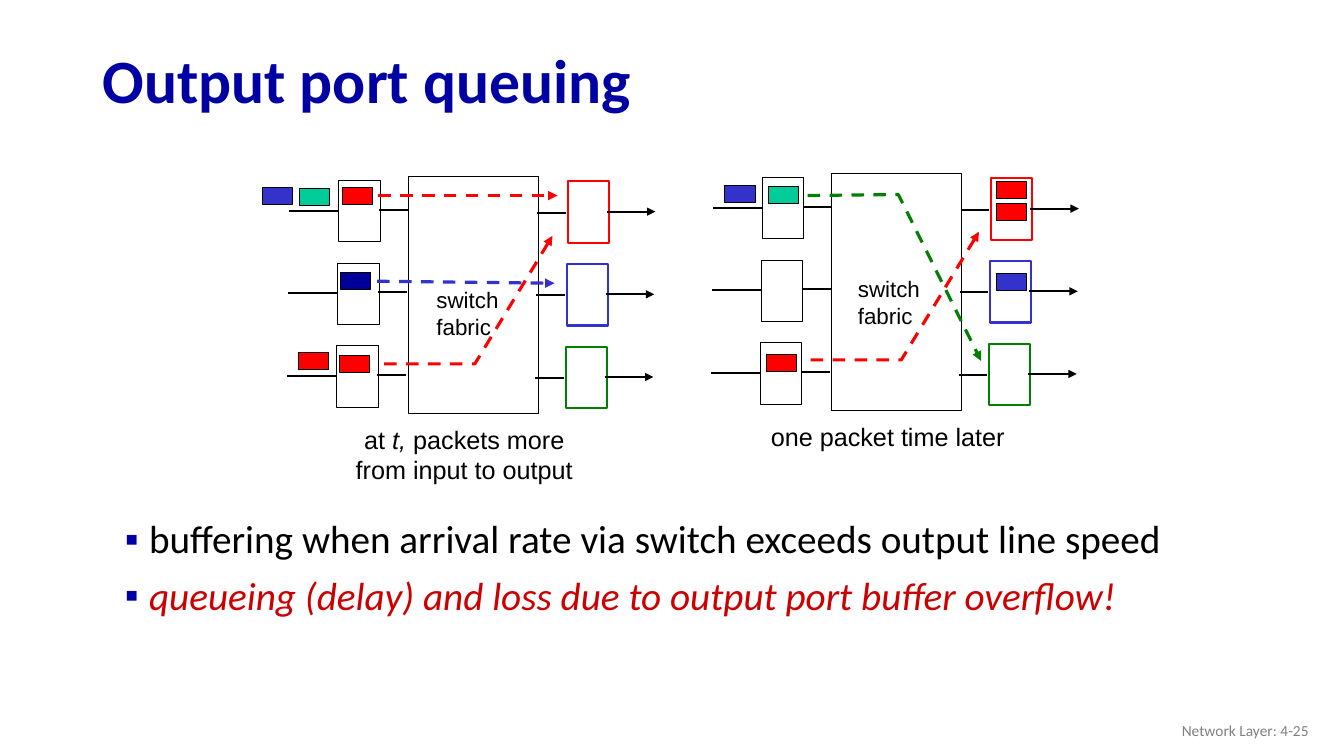
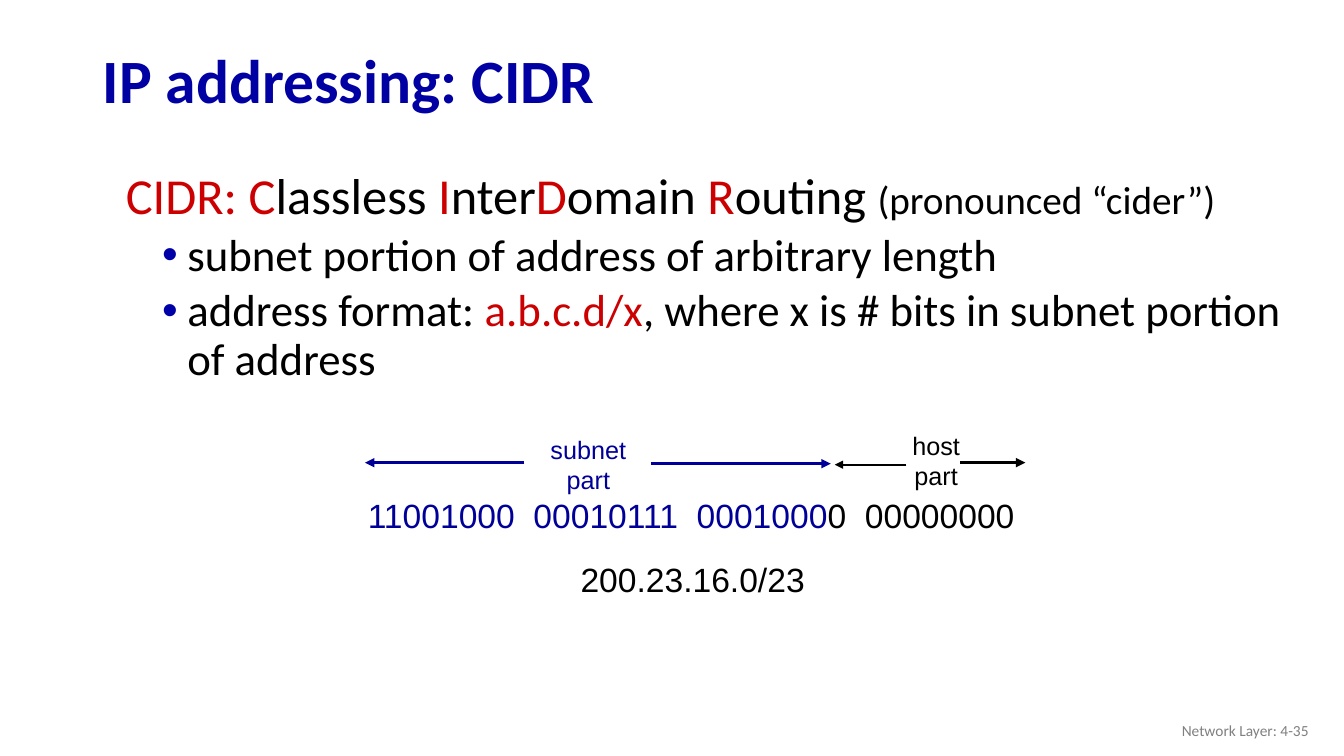
import lxml.etree
import pptx
import pptx.dml.color
import pptx.enum.dml
import pptx.enum.shapes
import pptx.enum.text
import pptx.oxml.ns
import pptx.util

RGBColor = pptx.dml.color.RGBColor
Inches = pptx.util.Inches
Pt = pptx.util.Pt
ALIGN = pptx.enum.text.PP_ALIGN
ANCHOR = pptx.enum.text.MSO_ANCHOR

BLACK = RGBColor(0, 0, 0)
WHITE = RGBColor(0xFF, 0xFF, 0xFF)
TITLE_BLUE = RGBColor(0, 0, 0xA3)
BULLET_BLUE = RGBColor(0, 0, 0xA8)
NAVY = RGBColor(0, 0, 0x99)
BLUE = RGBColor(0x33, 0x33, 0xCC)
RED = RGBColor(0xFF, 0, 0)
ACCENT = RGBColor(0xCC, 0, 0)
GREEN = RGBColor(0, 0x80, 0)
TEAL = RGBColor(0, 0xCC, 0x99)
GRAY = RGBColor(0x80, 0x80, 0x80)

TITLE = dict(name="Calibri", size=Pt(44), bold=True, color=TITLE_BLUE)
FOOTER = dict(name="Calibri", size=Pt(11), color=GRAY)
BODY = dict(name="Calibri", size=Pt(28), color=BLACK)
LEAD = {**BODY, "size": Pt(36)}
POINT = {**BODY, "size": Pt(32)}
LABEL = dict(name="Arial", size=Pt(18), color=BLACK)
FABRIC = {**LABEL, "size": Pt(16)}
BITS = {**LABEL, "size": Pt(24)}
SUBNET = {**LABEL, "color": NAVY}

TIGHT = dict(line_spacing=0.9)
CENTER = dict(alignment=ALIGN.CENTER)
SPACED = dict(line_spacing=0.9, space_before=Pt(10))
SUBPOINT = dict(line_spacing=0.9, space_before=Pt(5))
HANG = (0.39, -0.24)
SQUARE = dict(indent=HANG, bullet=("▪", TITLE_BLUE))
DOT = dict(indent=(0.76, -0.25), bullet=("•", BULLET_BLUE))

PITCH = 0.82
PORT = (0.41, 0.61)
PACKET = (0.3, 0.17)
PORT_COLORS = [RED, BLUE, GREEN]
LINKS = [(-1.18, -0.69, 0.34, False), (-0.29, 0, 0.33, False),
         (1.28, 1.56, 0.36, False), (1.97, 2.45, 0.35, True)]

DIAGRAMS = [
    dict(origin=(4.05, 1.75), label=(0.18, 1.04), caption_height=0.7,
         caption=[[("at ", {}), ("t,", dict(italic=True)), (" packets more", {})],
                  [("from input to output", {})]],
         packets=[(-0.65, 0.11, RED), (-0.67, 0.95, NAVY), (-0.68, 1.78, RED),
                  (-1.08, 0.12, TEAL), (-1.09, 1.75, RED), (-1.45, 0.11, BLUE)],
         routes=[(RED, [(-0.3, 0.19), (1.48, 0.19)]),
                 (BLUE, [(-0.31, 1.04), (1.45, 1.06)]),
                 (RED, [(-0.24, 1.86), (0.66, 1.86), (1.43, 0.59)])]),
    dict(origin=(8.25, 1.72), label=(0.16, 0.96), caption_height=0.4,
         caption=[[("one packet time later", {})]],
         packets=[(1.63, 0.08, RED), (1.63, 0.3, RED), (1.63, 0.99, BLUE),
                  (-0.63, 0.13, TEAL), (-0.65, 1.8, RED), (-1.06, 0.12, BLUE)],
         routes=[(RED, [(-0.21, 1.85), (0.69, 1.85), (1.46, 0.58)]),
                 (GREEN, [(-0.24, 0.22), (0.66, 0.21), (1.48, 1.86)])]),
]

QUEUING_POINTS = [
    [("buffering when arrival rate via switch exceeds output line speed", {})],
    [("queueing (delay) and loss due to output port buffer overflow!",
      dict(color=ACCENT, italic=True))],
]

RED_TEXT = dict(color=ACCENT)
CIDR_LEAD = [("CIDR: C", RED_TEXT), ("lassless ", {}), ("I", RED_TEXT), ("nter", {}),
             ("D", RED_TEXT), ("omain ", {}), ("R", RED_TEXT), ("outing ", {}),
             ("(pronounced “cider”)", dict(size=Pt(28)))]
CIDR_POINTS = [
    [("subnet portion of address of arbitrary length", {})],
    [("address format: ", {}), ("a.b.c.d/x", RED_TEXT),
     (", where x is # bits in subnet portion of address", {})],
]

ADDRESS_TEXTS = [
    ((3.55, 4.86, 6.7, 0.5), BITS, {},
     [[("11001000  00010111  0001000", dict(color=NAVY)), ("0  00000000", {})]]),
    ((5.36, 4.26, 0.95, 0.7), SUBNET, CENTER, [[("subnet", {})], [("part", {})]]),
    ((8.95, 4.22, 0.67, 0.7), LABEL, CENTER, [[("host", {})], [("part", {})]]),
    ((5.66, 5.5, 2.43, 0.5), BITS, {}, [[("200.23.16.0/23", {})]]),
]
ADDRESS_ARROWS = [(5.2, 3.62, 4.59, NAVY, 2.25), (6.46, 8.24, 4.6, NAVY, 2.25),
                  (8.99, 8.28, 4.61, BLACK, 1.5), (9.52, 10.17, 4.59, BLACK, 2.25)]


def add_child(parent, tag, **attributes):
    return lxml.etree.SubElement(parent, pptx.oxml.ns.qn(tag), attributes)


def set_format(target, values):
    for name, value in values.items():
        if name == "color":
            target.color.rgb = value
        else:
            setattr(target, name, value)


def mark_paragraph(para, indent=None, bullet=None):
    properties = para._p.get_or_add_pPr()
    if indent:
        properties.set("marL", str(Inches(indent[0])))
        properties.set("indent", str(Inches(indent[1])))
    if bullet:
        symbol, color = bullet
        add_child(add_child(properties, "a:buClr"), "a:srgbClr", val=str(color))
        add_child(properties, "a:buFont", typeface="Arial")
        add_child(properties, "a:buChar", char=symbol)


def fill_paragraph(para, spans, font, layout, marks):
    set_format(para, layout)
    mark_paragraph(para, **marks)
    for words, changes in spans:
        span = para.add_run()
        span.text = words
        set_format(span.font, {**font, **changes})


def add_text(page, place, paragraphs, wrap=True, anchor=ANCHOR.TOP):
    box = page.shapes.add_textbox(*map(Inches, place))
    frame = box.text_frame
    set_format(frame, dict(word_wrap=wrap, vertical_anchor=anchor))
    for index, paragraph in enumerate(paragraphs):
        para = frame.add_paragraph() if index else frame.paragraphs[0]
        fill_paragraph(para, *paragraph)


def style_all(lines, font, layout, marks={}):
    return [(spans, font, layout, marks) for spans in lines]


def add_rect(page, place, fill, color=BLACK, width=0.75):
    box = page.shapes.add_shape(pptx.enum.shapes.MSO_SHAPE.RECTANGLE, *map(Inches, place))
    box.shadow.inherit = False
    box.fill.solid()
    box.fill.fore_color.rgb = fill
    set_format(box.line, dict(color=color, width=Pt(width)))


def add_route(page, points, color=BLACK, width=1.5, arrow=True, dashed=False):
    corners = [(Inches(x), Inches(y)) for x, y in points]
    if len(corners) == 2:
        route = page.shapes.add_connector(
            pptx.enum.shapes.MSO_CONNECTOR.STRAIGHT, *corners[0], *corners[1])
    else:
        builder = page.shapes.build_freeform(*corners[0])
        builder.add_line_segments(corners[1:], close=False)
        route = builder.convert_to_shape()
        route.fill.background()
    set_format(route.line, dict(color=color, width=Pt(width)))
    if dashed:
        route.line.dash_style = pptx.enum.dml.MSO_LINE.DASH
    if arrow:
        add_child(route.line._get_or_add_ln(), "a:tailEnd", type="triangle")
    add_child(route._element.spPr, "a:effectLst")


def add_page(deck, title, number):
    page = deck.slides.add_slide(deck.slide_layouts[6])
    add_text(page, (0.92, 0.34, 11.5, 0.98), style_all([[(title, {})]], TITLE, TIGHT),
             anchor=ANCHOR.MIDDLE)
    add_text(page, (10.08, 7.05, 3, 0.4),
             style_all([[(f"Network Layer: 4-{number}", {})]], FOOTER,
                       dict(alignment=ALIGN.RIGHT)), anchor=ANCHOR.MIDDLE)
    return page


def add_diagram(page, diagram):
    left, top = diagram["origin"]
    add_rect(page, (left, top, 1.29, 2.35), WHITE)
    for row, color in enumerate(PORT_COLORS):
        lean, drop = left - 0.01 * row, top + PITCH * row
        add_rect(page, (lean - 0.69, drop + 0.04, *PORT), WHITE)
        add_rect(page, (lean + 1.58, drop + 0.05, *PORT), WHITE, color, 1.5)
        for start, end, height, arrow in LINKS:
            add_route(page, [(lean + start, drop + height), (lean + end, drop + height)],
                      arrow=arrow)
    for x, y, color in diagram["packets"]:
        add_rect(page, (left + x, top + y, *PACKET), color)
    for color, points in diagram["routes"]:
        add_route(page, [(left + x, top + y) for x, y in points], color, 2.25, dashed=True)
    x, y = diagram["label"]
    add_text(page, (left + x, top + y, 0.82, 0.64),
             style_all([[("switch", {})], [("fabric", {})]], FABRIC, {}), wrap=False)
    add_text(page, (left - 0.79, top + 2.41, 2.69, diagram["caption_height"]),
             style_all(diagram["caption"], LABEL, CENTER))


def build_queuing(deck):
    page = add_page(deck, "Output port queuing", 25)
    for diagram in DIAGRAMS:
        add_diagram(page, diagram)
    add_text(page, (0.99, 5.11, 11, 1.92), style_all(QUEUING_POINTS, BODY, SPACED, SQUARE))


def build_cidr(deck):
    page = add_page(deck, "IP addressing: CIDR", 35)
    add_text(page, (1, 1.65, 12.13, 2.27),
             style_all([CIDR_LEAD], LEAD, SPACED, dict(indent=HANG))
             + style_all(CIDR_POINTS, POINT, SUBPOINT, DOT))
    for place, font, layout, lines in ADDRESS_TEXTS:
        add_text(page, place, style_all(lines, font, layout), wrap=False)
    for start, end, height, color, width in ADDRESS_ARROWS:
        add_route(page, [(start, height), (end, height)], color, width)


def main():
    deck = pptx.Presentation()
    set_format(deck, dict(slide_width=Inches(13.33), slide_height=Inches(7.5)))
    build_queuing(deck)
    build_cidr(deck)
    deck.save("out.pptx")


if __name__ == "__main__":
    main()
